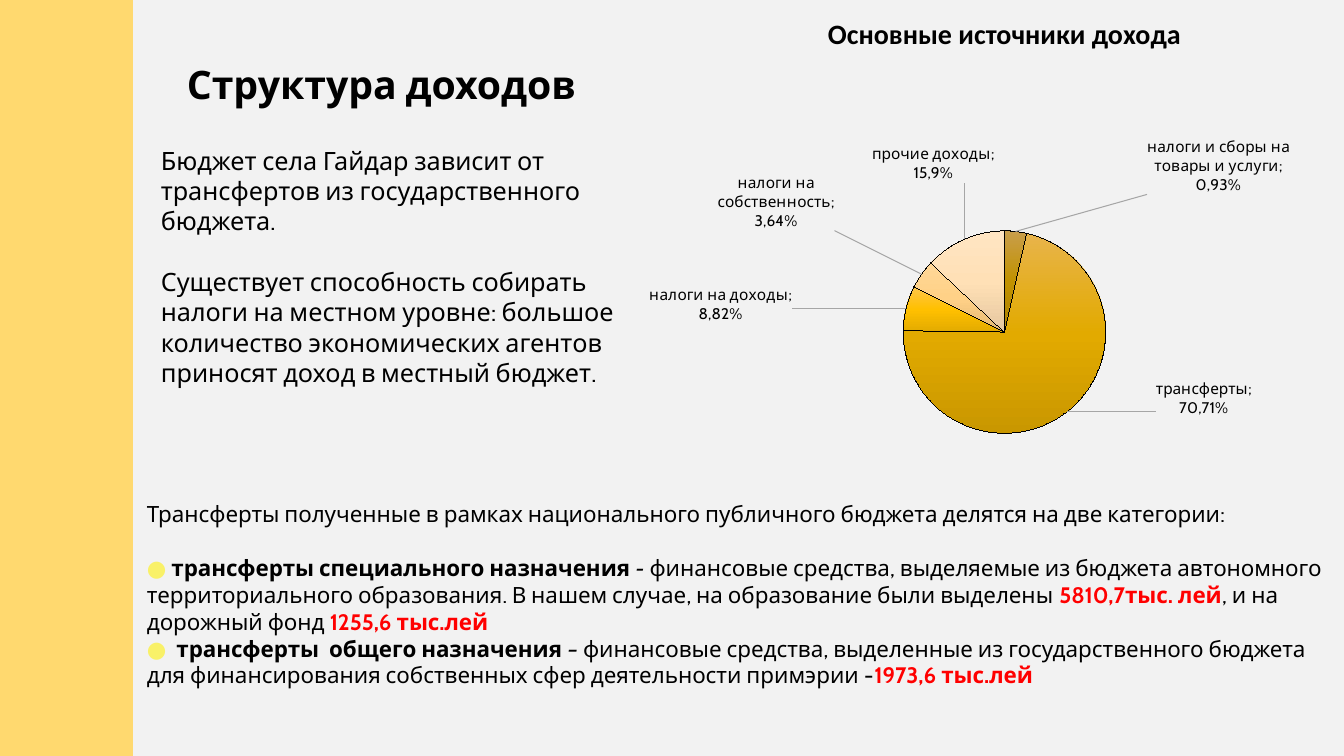
from pptx import Presentation
from pptx.chart.data import CategoryChartData
from pptx.dml.color import RGBColor
from pptx.enum.chart import XL_CHART_TYPE as ChartType, XL_LABEL_POSITION as LabelPosition
from pptx.enum.shapes import MSO_SHAPE as Shape
from pptx.oxml import parse_xml
from pptx.oxml.ns import nsdecls, qn
from pptx.util import Emu, Pt

PX = 914400 / 100.8
COLORS = {
    "background": "F2F2F2", "band": "FFD96F", "text": "000000",
    "bullet": "F9F168", "amount": "FF0000", "leader": "A6A6A6",
}
# category, share, shown value, label shift in px, gradient from top to bottom
INCOME = [
    ("налоги и сборы на товары и услуги", 0.035, "0,93%", (131, -31),
     ("C99E4B", "C19200", "AC8100")),
    ("трансферты", 0.717, "70,71%", (85, -36), ("E8B44B", "E2AA00", "C99700")),
    ("налоги на доходы", 0.072, "8,82%", (-108, 17), ("FFC64B", "FFC000", "E3AB00")),
    ("налоги на собственность", 0.046, "3,64%", (-82, -40), ("FFD798", "FFD187", "E5BA75")),
    ("прочие доходы", 0.13, "15,9%", (33, -51), ("FFE5C3", "FFE0B6", "E5C79F")),
]


def px(*lengths):
    return [Emu(round(length * PX)) for length in lengths]


def rgb(name):
    return RGBColor.from_string(COLORS[name])


def add_run(paragraph, text, size=16, font="Cabin", color="text", bold=False, italic=False):
    run = paragraph.add_run()
    run.text = text
    run.font.size = Pt(size)
    run.font.name = font
    run.font.bold = bold
    run.font.italic = italic
    run.font.color.rgb = rgb(color)


def manual_layout(settings):
    """Build a c:layout element from (tag, value) pairs."""
    children = "".join(f'<c:{tag} val="{value}"/>' for tag, value in settings)
    return parse_xml(f'<c:layout {nsdecls("c")}><c:manualLayout>{children}'
                     '</c:manualLayout></c:layout>')


class SlideBuilder:
    def __init__(self, presentation):
        self.slide = presentation.slides.add_slide(presentation.slide_layouts[6])
        self.shapes = self.slide.shapes
        fill = self.slide.background.fill
        fill.solid()
        fill.fore_color.rgb = rgb("background")

    def band(self, *box):
        shape = self.shapes.add_shape(Shape.RECTANGLE, *px(*box))
        shape.shadow.inherit = False
        shape.fill.solid()
        shape.fill.fore_color.rgb = rgb("band")
        shape.line.fill.background()

    def text(self, box, paragraphs, gap=0, **style):
        """Each paragraph is a list of (text, overrides); gap goes before the second one."""
        frame = self.shapes.add_textbox(*px(*box)).text_frame
        frame.word_wrap = True
        for index, runs in enumerate(paragraphs):
            paragraph = frame.add_paragraph() if index else frame.paragraphs[0]
            if index == 1:
                paragraph.space_before = Pt(gap)
            for text, overrides in runs:
                add_run(paragraph, text, **{**style, **overrides})

    def pie(self, box, plot, income):
        """Draw a pie; plot is its inner area as fractions of the chart."""
        data = CategoryChartData(number_format="0.0%")
        data.categories = [row[0] for row in income]
        data.add_series("Series 1", [row[1] for row in income])
        chart = self.shapes.add_chart(ChartType.PIE, *px(*box), data).chart
        chart.has_legend = False
        chart.has_title = False
        chart.font.name = "Calibri"
        chart.font.size = Pt(10)
        chart.font.color.rgb = rgb("text")
        chart.plots[0].vary_by_categories = True

        series = chart.plots[0].series[0]
        series.format.line.color.rgb = rgb("text")
        series.format.line.width = Pt(0.75)
        self.style_labels(series.data_labels)
        for index, (name, _, value, shift, gradient) in enumerate(income):
            point = series.points[index]
            self.fill_slice(series, point, index, gradient)
            self.label_slice(point.data_label, f"{name}; {value}", shift, box[2:])

        area = chart._chartSpace.chart.plotArea
        for layout in area.findall(qn("c:layout")):
            area.remove(layout)
        area.insert(0, manual_layout([("layoutTarget", "inner"), ("xMode", "edge"),
                                      ("yMode", "edge"), *zip("xywh", plot)]))

    def style_labels(self, labels):
        labels.show_value = True
        labels.show_category_name = True
        labels.number_format = "0.0%"
        labels.number_format_is_linked = False
        labels.position = LabelPosition.INSIDE_END
        labels.font.name = "Cabin"
        labels.font.size = Pt(11)
        labels.font.color.rgb = rgb("text")
        labels._element.append(parse_xml(
            f'<c:leaderLines {nsdecls("c", "a")}><c:spPr><a:ln w="9525"><a:solidFill>'
            f'<a:srgbClr val="{COLORS["leader"]}"/></a:solidFill></a:ln></c:spPr>'
            '</c:leaderLines>'))

    def fill_slice(self, series, point, index, gradient):
        point.format.fill.gradient()
        point.format.line.color.rgb = rgb("text")
        old = list(series._element.iter(qn("a:gradFill")))[index]
        stops = "".join(
            f'<a:gs pos="{step * 50000}"><a:srgbClr val="{color}"/></a:gs>'
            for step, color in enumerate(gradient))
        old.getparent().replace(old, parse_xml(
            f'<a:gradFill {nsdecls("a")} rotWithShape="1"><a:gsLst>{stops}</a:gsLst>'
            '<a:lin ang="5400000" scaled="0"/></a:gradFill>'))

    def label_slice(self, label, text, shift, chart_size):
        add_run(label.text_frame.paragraphs[0], text, size=11)
        label.position = LabelPosition.BEST_FIT
        element = label._dLbl
        element.find(qn("c:showCatName")).set("val", "1")
        offsets = [round(length / size, 3) for length, size in zip(shift, chart_size)]
        element.find(qn("c:idx")).addnext(manual_layout(zip("xy", offsets)))


def main():
    presentation = Presentation()
    presentation.slide_width, presentation.slide_height = px(1344, 756)
    page = SlideBuilder(presentation)
    page.band(0, 0, 133, 756)

    page.text((177, 55, 440, 57), [[("Структура доходов", {})]], size=28, bold=True)
    page.text((151, 140, 507, 254), [
        [("Бюджет села Гайдар зависит от трансфертов из государственного бюджета.", {})],
        [("Существует способность собирать налоги на местном уровне: большое количество "
          "экономических агентов приносят доход в местный бюджет.", {})],
    ], gap=22, size=18)
    page.text((818, 12, 471, 44), [[("Основные источники дохода", {})]],
              size=20, font="Calibri", bold=True)

    bold = {"bold": True}
    italic = {"italic": True}
    bullet = {"color": "bullet", "bold": True, "italic": True}
    amount = {"color": "amount", "bold": True}
    page.text((137, 495, 1207, 201), [
        [("Трансферты полученные в рамках национального публичного бюджета делятся "
          "на две категории:", {})],
        [("● ", bullet), ("трансферты специального назначения ", bold), ("- ", italic),
         ("финансовые средства, выделяемые из бюджета автономного территориального "
          "образования. В нашем случае, на образование были выделены ", {}),
         ("5810,7тыс. лей", amount), (", и на дорожный фонд ", {}),
         ("1255,6 тыс.лей", amount)],
        [("●  ", bullet), ("трансферты  общего назначения ", bold), ("– ", italic),
         ("финансовые средства, выделенные из государственного бюджета для "
          "финансирования собственных сфер деятельности примэрии -", {}),
         ("1973,6 тыс.лей", amount)],
    ], gap=19.5, size=16)

    page.pie((612, 73, 727, 405), (0.36, 0.39, 0.36, 0.5), INCOME)
    presentation.save("out.pptx")


if __name__ == "__main__":
    main()
